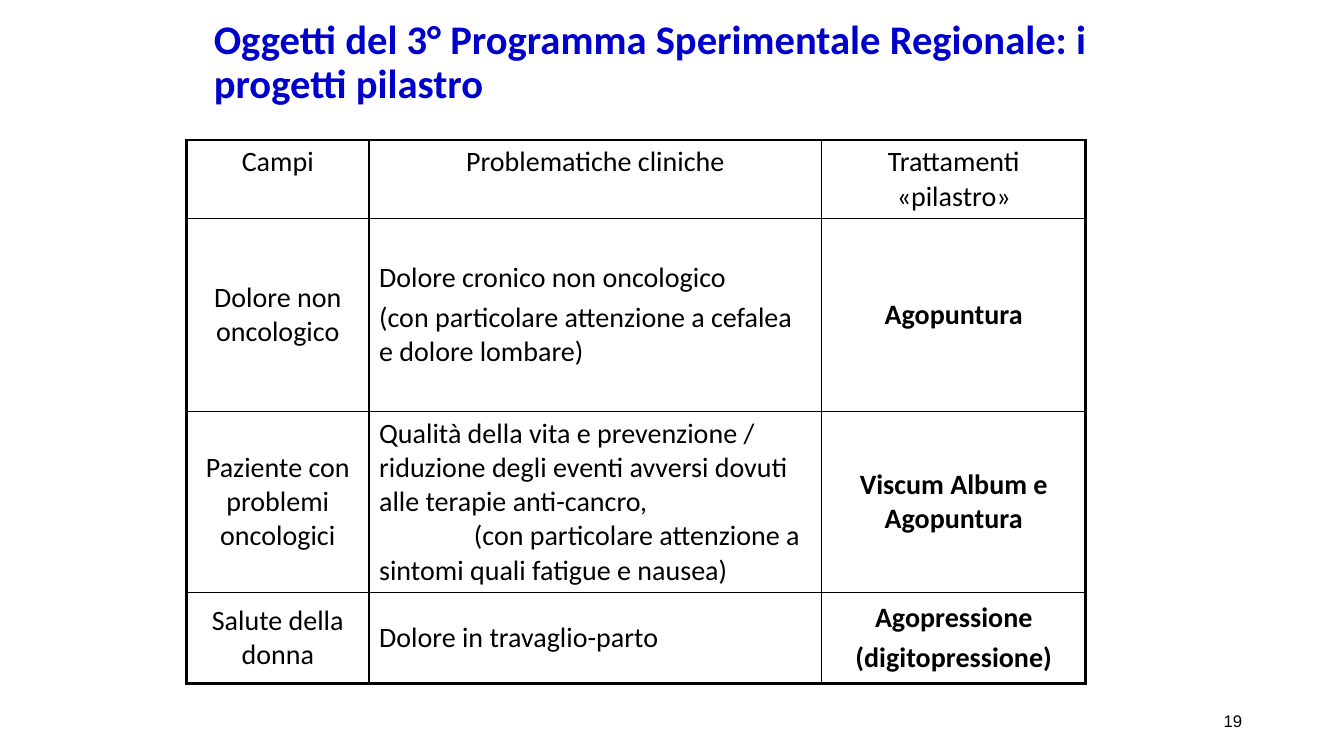
"""Build the slide on the pillar projects of the third regional programme."""
from collections import namedtuple
from dataclasses import dataclass

from lxml import etree
from pptx import Presentation
from pptx.dml.color import RGBColor
from pptx.enum.text import MSO_ANCHOR, MSO_AUTO_SIZE, PP_ALIGN
from pptx.oxml.ns import qn
from pptx.util import Inches, Pt

LEFT, CENTER, RIGHT = PP_ALIGN.LEFT, PP_ALIGN.CENTER, PP_ALIGN.RIGHT
TOP, MIDDLE = MSO_ANCHOR.TOP, MSO_ANCHOR.MIDDLE
NO_AUTOFIT = MSO_AUTO_SIZE.NONE
TITLE_ONLY = 5

Para = namedtuple("Para", "text indent before", defaults=(0, 4))

TITLE = "Oggetti del 3° Programma Sperimentale Regionale: i progetti pilastro"
PAGE = "19"
ROWS = [
    [[Para("Campi")], [Para("Problematiche cliniche")], [Para("Trattamenti «pilastro»")]],
    [
        [Para("Dolore non oncologico")],
        [
            Para("Dolore cronico non oncologico"),
            Para("(con particolare attenzione a cefalea e dolore lombare)"),
        ],
        [Para("Agopuntura")],
    ],
    [
        [Para("Paziente con problemi oncologici")],
        [
            Para("Qualità della vita e prevenzione / riduzione degli eventi avversi "
                 "dovuti alle terapie anti-cancro,"),
            Para("(con particolare attenzione a sintomi quali fatigue e nausea)", 0.94, 0),
        ],
        [Para("Viscum Album e Agopuntura")],
    ],
    [
        [Para("Salute della donna")],
        [Para("Dolore in travaglio-parto")],
        [Para("Agopressione"), Para("(digitopressione)")],
    ],
]
COL_WIDTHS = [1.81, 4.49, 2.62]
ROW_HEIGHTS = [0.78, 1.91, 1.8, 0.9]
TITLE_BOX = (2.02, 0, 9.37, 1.25)
TABLE_AT = (1.85, 1.39)
PAGE_BOX = (9.42, 6.95, 3, 0.4)


@dataclass(frozen=True)
class Theme:
    title: str = "0000CC"
    ink: str = "000000"
    font: str = "Calibri"
    page_font: str = "Arial"
    title_size: int = 29
    body_size: int = 20
    page_size: int = 12
    outer: float = 2.25
    inner: float = 1


THEME = Theme()


def style(p, name, size, color, bold=False):
    p.font.name, p.font.size, p.font.bold = name, Pt(size), bold
    p.font.color.rgb = RGBColor.from_string(color)


def set_borders(cell, widths):
    tcPr = cell._tc.get_or_add_tcPr()
    for i, (side, width) in enumerate(widths.items()):
        ln = etree.Element(qn(f"a:ln{side}"), w=str(Pt(width)))
        fill = etree.SubElement(ln, qn("a:solidFill"))
        etree.SubElement(fill, qn("a:srgbClr"), val=THEME.ink)
        tcPr.insert(i, ln)


def fill_cell(cell, paras, row, col):
    cell.fill.background()
    cell.vertical_anchor = MIDDLE if row else TOP
    tf = cell.text_frame
    for i, para in enumerate(paras):
        p = tf.add_paragraph() if i else tf.paragraphs[0]
        p.text = para.text
        p.alignment = LEFT if row and col == 1 else CENTER
        p.space_before = Pt(para.before if i else 0)
        if para.indent:
            p._p.get_or_add_pPr().set("indent", str(Inches(para.indent)))
        style(p, THEME.font, THEME.body_size, THEME.ink, row > 0 and col == 2)
    edges = {"L": col == 0, "R": col == len(COL_WIDTHS) - 1,
             "T": row == 0, "B": row == len(ROWS) - 1}
    set_borders(cell, {side: THEME.outer if edge else THEME.inner
                       for side, edge in edges.items()})


def add_title(s):
    sp = s.shapes.title
    sp.left, sp.top, sp.width, sp.height = map(Inches, TITLE_BOX)
    tf = sp.text_frame
    tf.text = TITLE
    tf.auto_size = NO_AUTOFIT
    tf.vertical_anchor = MIDDLE
    p = tf.paragraphs[0]
    p.alignment, p.line_spacing = LEFT, 0.9
    style(p, THEME.font, THEME.title_size, THEME.title, True)


def add_projects(s):
    size = sum(COL_WIDTHS), sum(ROW_HEIGHTS)
    table = s.shapes.add_table(len(ROWS), len(COL_WIDTHS),
                               *map(Inches, TABLE_AT + size)).table
    table.first_row = table.horz_banding = False
    for column, width in zip(table.columns, COL_WIDTHS):
        column.width = Inches(width)
    for r, (cells, height) in enumerate(zip(ROWS, ROW_HEIGHTS)):
        table.rows[r].height = Inches(height)
        for c, paras in enumerate(cells):
            fill_cell(table.cell(r, c), paras, r, c)


def add_page_number(s):
    tf = s.shapes.add_textbox(*map(Inches, PAGE_BOX)).text_frame
    tf.word_wrap = True
    tf.vertical_anchor = MIDDLE
    p = tf.paragraphs[0]
    p.text, p.alignment = PAGE, RIGHT
    style(p, THEME.page_font, THEME.page_size, THEME.ink)


def main():
    prs = Presentation()
    prs.slide_width, prs.slide_height = Inches(13.33), Inches(7.5)
    s = prs.slides.add_slide(prs.slide_layouts[TITLE_ONLY])
    add_title(s)
    add_projects(s)
    add_page_number(s)
    prs.save("out.pptx")


if __name__ == "__main__":
    main()
